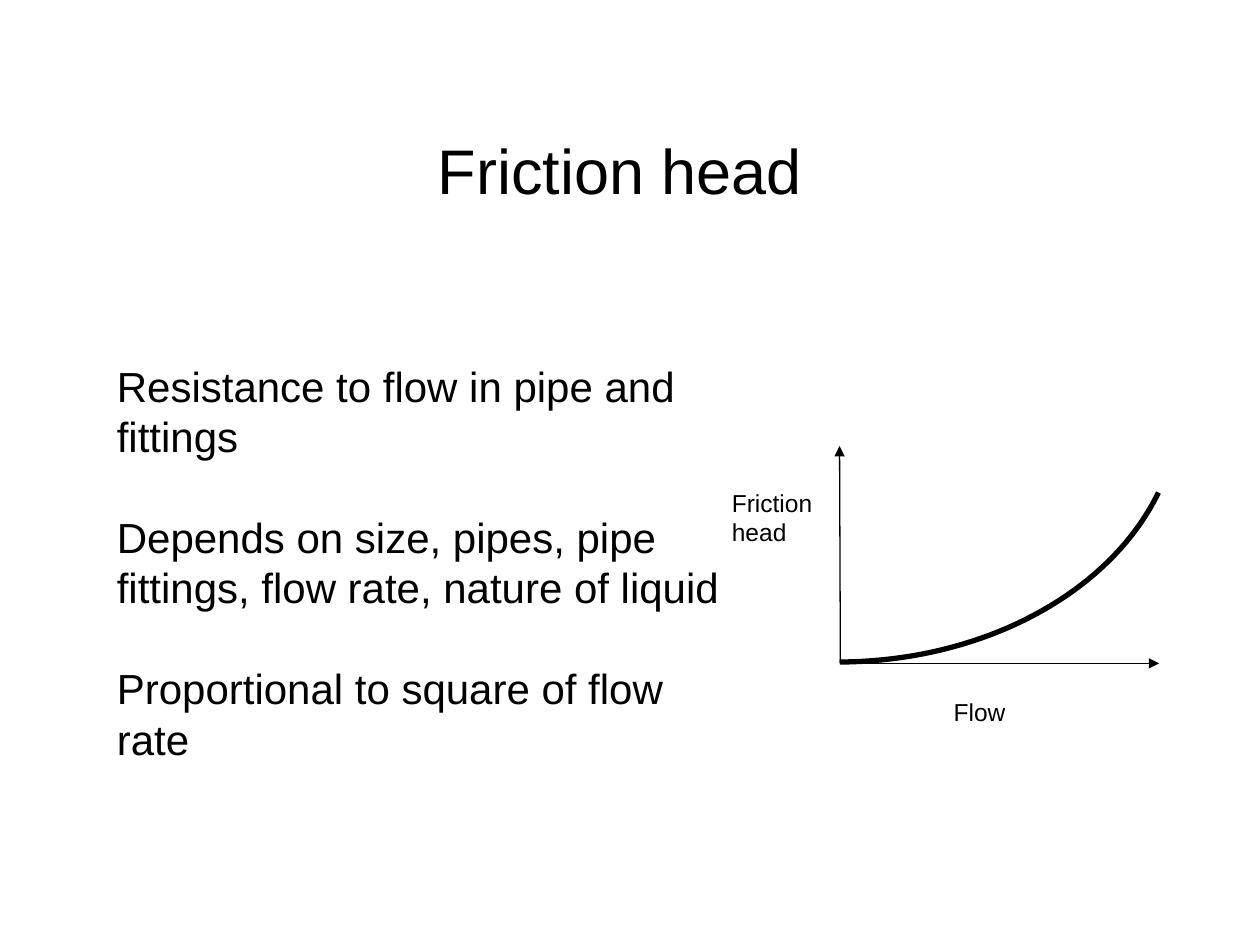
"""Build the friction head slide with its flow curve."""
from pptx import Presentation, util as u
from pptx.dml.color import RGBColor
from pptx.enum import shapes, text
from pptx.oxml.ns import qn
from lxml import etree

BLACK = RGBColor(0, 0, 0)
WHITE = RGBColor(255, 255, 255)

deck = Presentation()
deck.slide_width, deck.slide_height = u.Inches(10), u.Inches(7.5)
col, row = deck.slide_width / 100, deck.slide_height / 75
slide = deck.slides.add_slide(deck.slide_layouts[1])
slide.background.fill.solid()
slide.background.fill.fore_color.rgb = WHITE


def grid(*cells):
    return [round(cell * (row if i % 2 else col)) for i, cell in enumerate(cells)]


def write(holder, place, lines, size, align=text.PP_ALIGN.LEFT, gap=0):
    for name, length in zip(("left", "top", "width", "height"), grid(*place)):
        setattr(holder, name, length)
    frame = holder.text_frame
    frame.text = "\n".join(lines)
    frame_format = {"word_wrap": True, "auto_size": text.MSO_AUTO_SIZE.NONE,
                    "vertical_anchor": text.MSO_ANCHOR.TOP}
    for name, value in frame_format.items():
        setattr(frame, name, value)
    for i, paragraph in enumerate(frame.paragraphs):
        layout = {"alignment": align, "line_spacing": 1.0,
                  "space_before": u.Pt(gap if i else 0)}
        for name, value in layout.items():
            setattr(paragraph, name, value)
        props = paragraph._p.get_or_add_pPr()
        props.set("marL", "0")
        props.set("indent", "0")
        etree.SubElement(props, qn("a:buNone"))
        font = paragraph.runs[0].font
        for name, value in {"name": "Arial", "size": u.Pt(size)}.items():
            setattr(font, name, value)
        font.color.rgb = BLACK


write(slide.shapes.title, (23.2, 9.9, 52, 7.1), ["Friction head"], 36,
      text.PP_ALIGN.CENTER)
write(slide.placeholders[1], (8.27, 28.1, 51.2, 33.3), [
    "Resistance to flow in pipe and fittings",
    "Depends on size, pipes, pipe fittings, flow rate, nature of liquid",
    "Proportional to square of flow rate",
], 24, gap=28.8)

graph = slide.shapes.add_group_shape().shapes
origin = (66.7, 52.65)
for axis_end in ((66.63, 35.4), (92, 52.65)):
    axis = graph.add_connector(shapes.MSO_CONNECTOR.STRAIGHT, *grid(*origin, *axis_end))
    axis.line.width = u.Pt(0.75)
    axis.line.color.rgb = BLACK
    etree.SubElement(axis.line._get_or_add_ln(), qn("a:tailEnd"), type="triangle")
    etree.SubElement(axis._element.spPr, qn("a:effectLst"))

for lines, place in ((["Friction", "head"], (57.1, 38.2, 11.2, 6.9)),
                     (["Flow"], (74.7, 54.8, 7.5, 4.1))):
    write(graph.add_textbox(0, 0, 0, 0), place, lines, 14)

bends = ((66.65, 52.55), (77.9, 52.5), (88, 47.2), (91.95, 39.1))
steps = 40
points = []
for step in range(steps + 1):
    t = step / steps
    weights = ((1 - t) ** 3, 3 * t * (1 - t) ** 2, 3 * t ** 2 * (1 - t), t ** 3)
    points.append(grid(*(sum(w * bend[i] for w, bend in zip(weights, bends))
                         for i in range(2))))
builder = graph.build_freeform(*points[0])
builder.add_line_segments(points[1:], close=False)
curve = builder.convert_to_shape()
curve.shadow.inherit = False
curve.fill.background()
curve.line.width = u.Pt(3)
curve.line.color.rgb = BLACK

deck.save("out.pptx")
